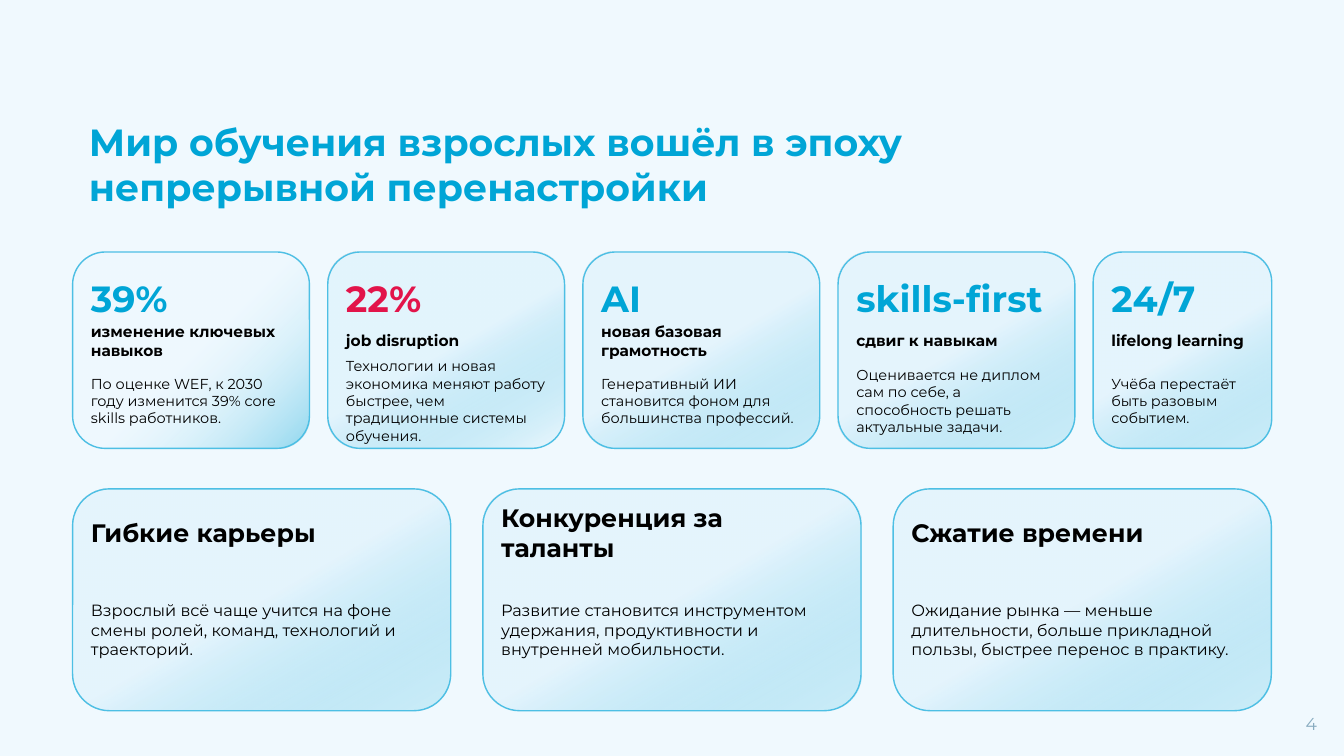
from pptx import Presentation
from pptx.dml.color import RGBColor
from pptx.enum.shapes import MSO_SHAPE
from pptx.enum.text import MSO_ANCHOR, PP_ALIGN
from pptx.oxml import parse_xml
from pptx.oxml.ns import nsdecls, qn
from pptx.util import Cm, Pt

ROUND = MSO_SHAPE.ROUNDED_RECTANGLE
MIDDLE = MSO_ANCHOR.MIDDLE
LEFT, RIGHT = PP_ALIGN.LEFT, PP_ALIGN.RIGHT

FONT = "Montserrat"
COLORS = {
    "back": "F0F9FE", "blue": "00A5D6", "pale": "DBF1FD", "edge": "4DBFE4",
    "red": "E2144A", "black": "000000", "grey": "88ACC0",
}
TITLE = "Мир обучения взрослых вошёл в эпоху непрерывной перенастройки"
PAGE = "4"

LINEAR = '<a:lin ang="14400000" scaled="0"/>'
CORNER = '<a:path path="circle"><a:fillToRect l="100000" t="100000"/></a:path>'
GLOWS = {
    "plain": (14, 51, LINEAR),
    "clear": (0, 60, LINEAR),
    "round": (40, 6, CORNER),
}

FACTS = [
    ("39%", "изменение ключевых навыков",
     "По оценке WEF, к 2030 году изменится 39% core skills работников.",
     "blue", "round", 5.97),
    ("22%", "job disruption",
     "Технологии и новая экономика меняют работу быстрее, "
     "чем традиционные системы обучения.",
     "red", "clear", 5.97),
    ("AI", "новая базовая грамотность",
     "Генеративный ИИ становится фоном для большинства профессий.",
     "blue", "plain", 5.97),
    ("skills-first", "сдвиг к навыкам",
     "Оценивается не диплом сам по себе, а способность решать "
     "актуальные задачи.",
     "blue", "plain", 5.97),
    ("24/7", "lifelong learning",
     "Учёба перестаёт быть разовым событием.",
     "blue", "plain", 4.5),
]
TRENDS = [
    ("Гибкие карьеры",
     "Взрослый всё чаще учится на фоне смены ролей, команд, "
     "технологий и траекторий."),
    ("Конкуренция за таланты",
     "Развитие становится инструментом удержания, продуктивности "
     "и внутренней мобильности."),
    ("Сжатие времени",
     "Ожидание рынка — меньше длительности, больше прикладной пользы, "
     "быстрее перенос в практику."),
]

EDGE, PAD = 1.83, 0.46
FACT = {"top": 6.35, "high": 4.95, "gap": 0.46}
TREND = {"top": 12.32, "wide": 9.53, "high": 5.59, "gap": 0.81}
FACT_ROWS = [(0.46, 1.4, 26, True), (1.83, 0.81, 11, True),
             (2.9, 1.7, 10.3, False)]
TREND_ROWS = [(0.56, 1.07, 18, True), (1.9, 3.3, 11.6, False)]


def rgb(name):
    return RGBColor.from_string(COLORS[name])


def add_text(slide, text, area, size, color="black", bold=False,
             align=LEFT, inset=0, lead=None):
    box = slide.shapes.add_textbox(*map(Cm, area))
    frame = box.text_frame
    frame.word_wrap = True
    frame.vertical_anchor = MIDDLE
    frame.margin_left = frame.margin_right = Cm(inset)
    frame.margin_top = frame.margin_bottom = Cm(inset)
    frame.text = text
    para = frame.paragraphs[0]
    para.alignment = align
    para.line_spacing = lead
    font = para.runs[0].font
    font.name, font.size, font.bold = FONT, Pt(size), bold
    font.color.rgb = rgb(color)


def add_card(slide, area, glow, rows, texts, tint):
    card = slide.shapes.add_shape(ROUND, *map(Cm, area))
    card.shadow.inherit = False
    card.fill.background()
    start, mid, shade = GLOWS[glow]
    stops = "".join(
        f'<a:gs pos="{pos}000"><a:srgbClr val="{COLORS[name]}">'
        f'<a:alpha val="{alpha * 1000}"/></a:srgbClr></a:gs>'
        for pos, name, alpha in ((0, "blue", start), (50, "pale", mid)))
    props = card._element.spPr
    props.replace(props.find(qn("a:noFill")), parse_xml(
        f'<a:gradFill {nsdecls("a")} rotWithShape="1">'
        f'<a:gsLst>{stops}</a:gsLst>{shade}</a:gradFill>'))
    card.line.color.rgb = rgb("edge")
    card.line.width = Pt(1)
    left, top, wide, _ = area
    tints = [tint] + ["black"] * (len(rows) - 1)
    for (drop, high, size, bold), text, color in zip(rows, texts, tints):
        spot = (left + PAD, top + drop, wide - 2 * PAD, high)
        add_text(slide, text, spot, size, color, bold)


def main():
    """Build the slide on adult learning and save it."""
    deck = Presentation()
    deck.slide_width, deck.slide_height = Cm(33.87), Cm(19.05)
    slide = deck.slides.add_slide(deck.slide_layouts[6])
    slide.background.fill.solid()
    slide.background.fill.fore_color.rgb = rgb("back")

    add_text(slide, PAGE, (31.67, 17.55, 2.03, 1.45), 12.3, "grey",
             align=RIGHT, inset=0.51, lead=0.8)
    add_text(slide, TITLE, (2.24, 2.92, 26.92, 2.41), 27, "blue", True)

    left = EDGE
    for *texts, tint, glow, wide in FACTS:
        area = (left, FACT["top"], wide, FACT["high"])
        add_card(slide, area, glow, FACT_ROWS, texts, tint)
        left += wide + FACT["gap"]

    for i, texts in enumerate(TRENDS):
        left = EDGE + i * (TREND["wide"] + TREND["gap"])
        area = (left, TREND["top"], TREND["wide"], TREND["high"])
        add_card(slide, area, "plain", TREND_ROWS, texts, "black")

    deck.save("out.pptx")


if __name__ == "__main__":
    main()
